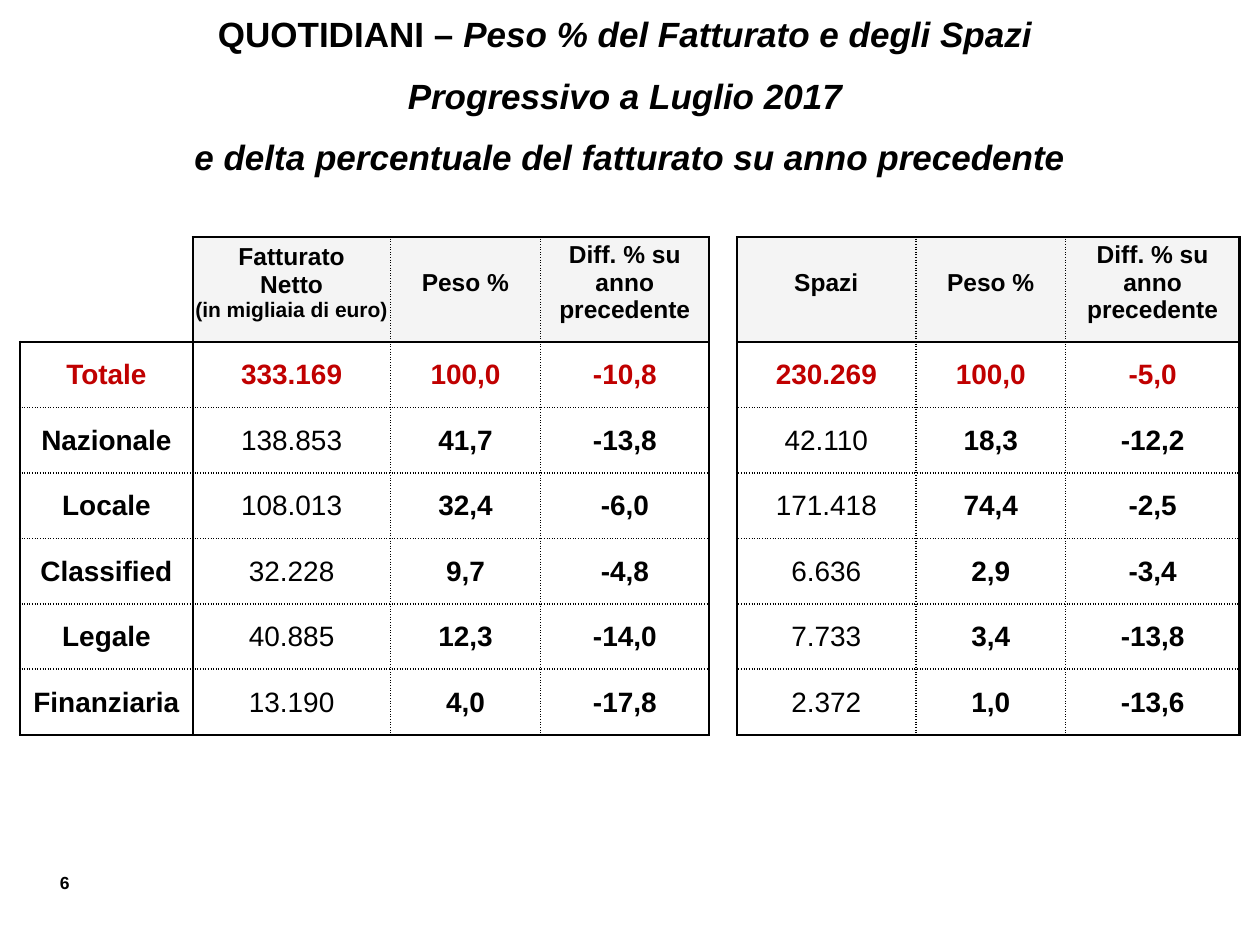
from lxml.etree import SubElement
from pptx import Presentation
from pptx.dml.color import RGBColor
from pptx.enum.text import MSO_ANCHOR, PP_ALIGN
from pptx.oxml.ns import qn
from pptx.util import Inches, Pt

TITLE = [
    [("QUOTIDIANI – ", {}), ("Peso % del Fatturato e degli Spazi ", {"italic": True})],
    [("Progressivo a Luglio 2017 ", {"italic": True})],
    [("e delta percentuale del fatturato su anno precedente", {"italic": True})],
]
DIFF = "Diff. % su anno precedente"
REVENUE = [[("Fatturato", {})], [("Netto\v", {}), ("(in migliaia di euro)", {"size": Pt(12)})]]
ROWS = [
    ["", REVENUE, "Peso %", DIFF, "", "Spazi", "Peso %", DIFF],
    ["Totale", "333.169", "100,0", "-10,8", "", "230.269", "100,0", "-5,0"],
    ["Nazionale", "138.853", "41,7", "-13,8", "", "42.110", "18,3", "-12,2"],
    ["Locale", "108.013", "32,4", "-6,0", "", "171.418", "74,4", "-2,5"],
    ["Classified", "32.228", "9,7", "-4,8", "", "6.636", "2,9", "-3,4"],
    ["Legale", "40.885", "12,3", "-14,0", "", "7.733", "3,4", "-13,8"],
    ["Finanziaria", "13.190", "4,0", "-17,8", "", "2.372", "1,0", "-13,6"],
]
COLS = [1.37, 1.57, 1.19, 1.34, 0.22, 1.42, 1.19, 1.38]
HEIGHTS = [0.82] + [0.52] * 6
AMOUNTS, GAP, LAST = (1, 5), 4, len(ROWS) - 1


def rgb(value):
    """Turn a hex string into a colour."""
    return RGBColor.from_string(value)


class Deck:
    """Style and current slide."""

    font, ink, accent, shade = "Arial", "000000", "C00000", "F2F2F2"

    def __init__(self, width, height):
        """Start a one-slide presentation."""
        self.prs = Presentation()
        self.prs.slide_width, self.prs.slide_height = Inches(width), Inches(height)
        self.s = self.prs.slides.add_slide(self.prs.slide_layouts[6])

    def box(self, x, y, w, h):
        """Convert shares of the slide into lengths."""
        sw, sh = self.prs.slide_width, self.prs.slide_height
        return round(x * sw), round(y * sh), round(w * sw), round(h * sh)

    def fill_text(self, tf, paragraphs, size, align=PP_ALIGN.CENTER, color=None, bold=True, gap=0):
        """Fill a text frame with paragraphs of runs."""
        tf.word_wrap = True
        for i, runs in enumerate(paragraphs):
            p = tf.add_paragraph() if i else tf.paragraphs[0]
            p.alignment = align
            if i and gap:
                p.space_before = Pt(gap)
            p.font.name, p.font.size, p.font.bold = self.font, Pt(size), bold
            p.font.color.rgb = rgb(color or self.ink)
            for text, changes in runs:
                r = p.add_run()
                r.text = text.rstrip("\v")
                for name, value in changes.items():
                    setattr(r.font, name, value)
                if text.endswith("\v"):
                    p.add_line_break()

    def text(self, area, paragraphs, size, **style):
        """Add a text box."""
        sp = self.s.shapes.add_textbox(*self.box(*area))
        self.fill_text(sp.text_frame, paragraphs, size, **style)

    def border(self, cell, side, kind):
        """Draw one side of a cell as solid, dotted or nothing."""
        ln = SubElement(cell._tc.get_or_add_tcPr(), qn(f"a:ln{side}"))
        if kind == "none":
            ln.set("w", "0")
            SubElement(ln, qn("a:noFill"))
            return
        ln.set("w", str(Pt(1.5 if kind == "solid" else 1)))
        fill = SubElement(ln, qn("a:solidFill"))
        SubElement(fill, qn("a:srgbClr"), val=self.ink)
        SubElement(ln, qn("a:prstDash"), val="solid" if kind == "solid" else "sysDot")

    def borders(self, cell, row, col):
        """Frame the two blocks and dot the lines inside them."""
        solid = {"L": col in (0, 1, 4, 5), "R": col in (0, 3, 4, 7),
                 "T": row in (0, 1), "B": row in (0, LAST)}
        hidden = "TB" if col == GAP else "LT" if (row, col) == (0, 0) else ""
        for side, strong in solid.items():
            kind = "none" if side in hidden else "solid" if strong else "dotted"
            self.border(cell, side, kind)

    def cell(self, cell, row, col, content):
        """Style and fill one table cell."""
        cell.vertical_anchor = MSO_ANCHOR.MIDDLE
        cell.margin_left = cell.margin_right = cell.margin_top = Inches(0.01)
        cell.margin_bottom = Inches(0.12 if row == 0 else 0)
        self.borders(cell, row, col)
        if row == 0 and content:
            cell.fill.solid()
            cell.fill.fore_color.rgb = rgb(self.shade)
            color = cell._tc.tcPr.find(f"{qn('a:solidFill')}/{qn('a:srgbClr')}")
            SubElement(color, qn("a:alpha"), val="80000")
        else:
            cell.fill.background()
        if content:
            paragraphs = [[(content, {})]] if isinstance(content, str) else content
            self.fill_text(cell.text_frame, paragraphs, 14 if row == 0 else 16,
                           color=self.accent if row == 1 else self.ink,
                           bold=row < 2 or col not in AMOUNTS)

    def table(self, x, y, cols, heights, rows):
        """Add the table."""
        sw, sh = self.prs.slide_width, self.prs.slide_height
        area = self.box(x, y, Inches(sum(cols)) / sw, Inches(sum(heights)) / sh)
        table = self.s.shapes.add_table(len(rows), len(cols), *area).table
        table.first_row = table.horz_banding = False
        for column, width in zip(table.columns, cols):
            column.width = Inches(width)
        for i, (height, row) in enumerate(zip(heights, rows)):
            table.rows[i].height = Inches(height)
            for j, content in enumerate(row):
                self.cell(table.cell(i, j), i, j, content)


def main():
    """Build the slide."""
    deck = Deck(10, 7.5)
    deck.text((0.019, 0.916, 0.046, 0.036), [[("6", {})]], 10, align=PP_ALIGN.RIGHT)
    deck.text((0, 0.007, 1, 0.193), TITLE, 20, gap=11)
    deck.table(0.016, 0.251, COLS, HEIGHTS, ROWS)
    deck.prs.save("out.pptx")


if __name__ == "__main__":
    main()
